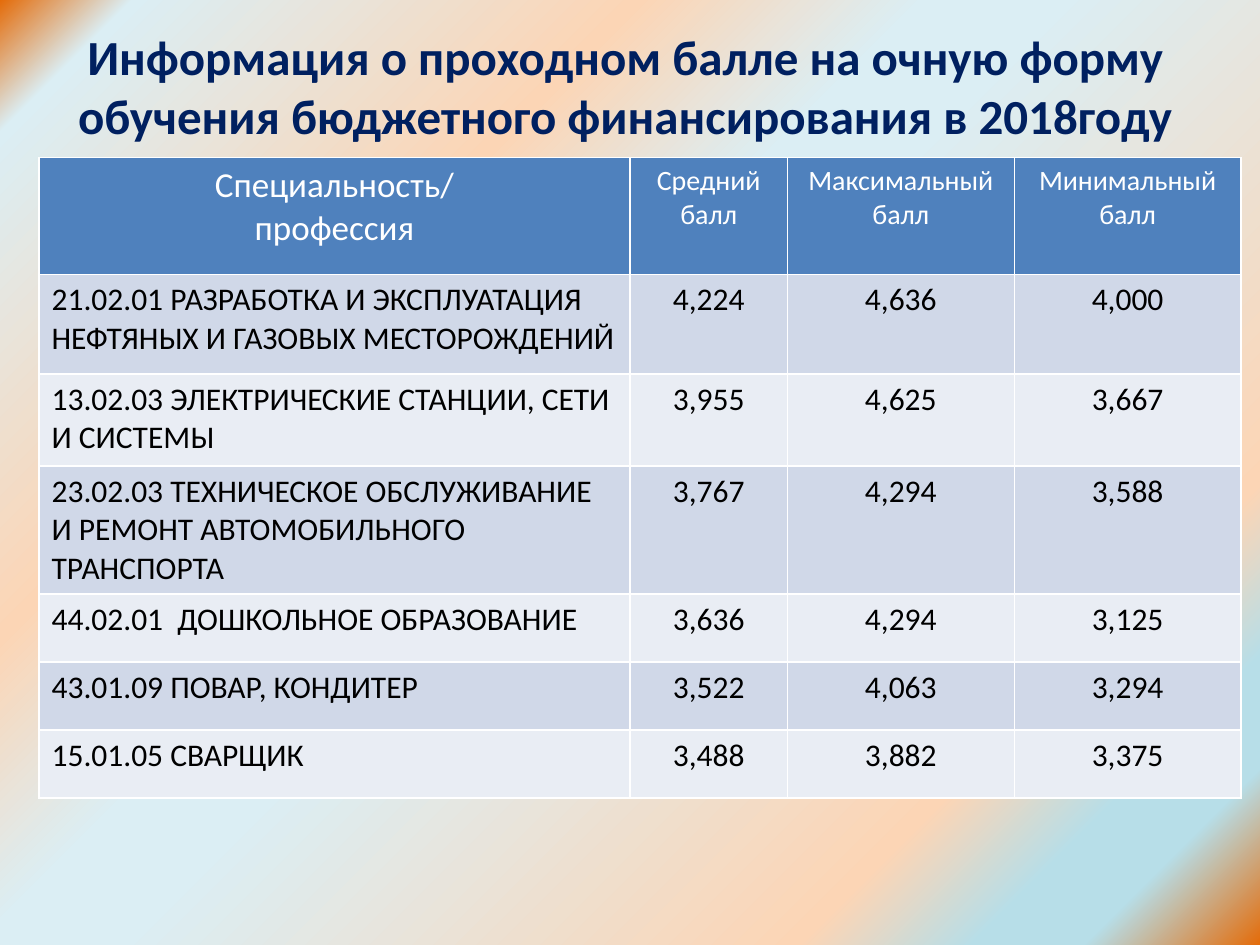
from pptx import Presentation
from pptx.dml.color import RGBColor as RGB
from pptx.enum.text import MSO_ANCHOR as Anchor, PP_ALIGN as Align
from pptx.oxml.ns import qn
from pptx.util import Inches, Pt
from lxml.etree import SubElement

COLORS = {
    "title": "002060", "header": "4F81BD", "odd": "D0D8E8", "even": "E9EDF4",
    "white": "FFFFFF", "black": "000000",
    "orange": "E46C0A", "teal": "B7DEE8", "peach": "FCD5B5", "ice": "DBEEF4",
}
FONT = "Calibri"
STOPS = [
    (0, "orange"), (8, "teal"), (13, "teal"), (21, "peach"), (52, "ice"),
    (56, "ice"), (58, "ice"), (71, "peach"), (94, "ice"), (100, "orange"),
]
TITLE = "Информация о проходном балле на очную форму обучения бюджетного финансирования в 2018году"
HEADER = ["Специальность/\nпрофессия", "Средний балл", "Максимальный балл", "Минимальный балл"]
SCORES = [
    ["21.02.01 РАЗРАБОТКА И ЭКСПЛУАТАЦИЯ НЕФТЯНЫХ И ГАЗОВЫХ МЕСТОРОЖДЕНИЙ", "4,224", "4,636", "4,000"],
    ["13.02.03 ЭЛЕКТРИЧЕСКИЕ СТАНЦИИ, СЕТИ И СИСТЕМЫ", "3,955", "4,625", "3,667"],
    ["23.02.03 ТЕХНИЧЕСКОЕ ОБСЛУЖИВАНИЕ И РЕМОНТ АВТОМОБИЛЬНОГО ТРАНСПОРТА", "3,767", "4,294", "3,588"],
    ["44.02.01  ДОШКОЛЬНОЕ ОБРАЗОВАНИЕ", "3,636", "4,294", "3,125"],
    ["43.01.09 ПОВАР, КОНДИТЕР", "3,522", "4,063", "3,294"],
    ["15.01.05 СВАРЩИК", "3,488", "3,882", "3,375"],
]
COLUMN_WIDTHS = [4.69, 1.25, 1.8, 1.8]
ROW_HEIGHTS = [0.93, 0.79, 0.73, 1.0, 0.54, 0.54, 0.54]


def color(name):
    return RGB.from_string(COLORS[name])


def style_paragraph(para, size, color_name, align, bold=False):
    para.alignment = align
    para.font.name = FONT
    para.font.size = Pt(size)
    para.font.bold = bold
    para.font.color.rgb = color(color_name)


def paint_background(page):
    page.background.fill.gradient()
    gradient = page.element.find(".//" + qn("a:gradFill"))
    gradient.clear()
    gradient.set("rotWithShape", "1")
    stops = SubElement(gradient, qn("a:gsLst"))
    for percent, name in STOPS:
        stop = SubElement(stops, qn("a:gs"), pos=str(percent * 1000))
        SubElement(stop, qn("a:srgbClr"), val=COLORS[name])
    shade = SubElement(gradient, qn("a:path"), path="circle")
    SubElement(shade, qn("a:fillToRect"), l="100000", t="100000")


def place_title(page, left, top, width, height):
    title = page.shapes.title
    title.left, title.top, title.width, title.height = left, top, width, height
    title.text_frame.text = TITLE
    title.text_frame.word_wrap = True
    title.text_frame.vertical_anchor = Anchor.TOP
    style_paragraph(title.text_frame.paragraphs[0], 28, "title", Align.CENTER, bold=True)


def fill_cell(cell, text, row, column):
    cell.text = text
    cell.fill.solid()
    if row == 0:
        fill, ink, size = "header", "white", 20 if column == 0 else 16
    else:
        fill, ink, size = "odd" if row % 2 else "even", "black", 18
    cell.fill.fore_color.rgb = color(fill)
    align = Align.LEFT if row and column == 0 else Align.CENTER
    for para in cell.text_frame.paragraphs:
        style_paragraph(para, size, ink, align)


def place_scores(page, left, top, width, height):
    rows = [HEADER] + SCORES
    table = page.shapes.add_table(len(rows), len(HEADER), left, top, width, height).table
    for column, inches in zip(table.columns, COLUMN_WIDTHS):
        column.width = Inches(inches)
    for row, inches in zip(table.rows, ROW_HEIGHTS):
        row.height = Inches(inches)
    for r, texts in enumerate(rows):
        for c, text in enumerate(texts):
            fill_cell(table.cell(r, c), text, r, c)


def main():
    deck = Presentation()
    deck.slide_width, deck.slide_height = Inches(10), Inches(7.5)
    page = deck.slides.add_slide(deck.slide_layouts[5])
    paint_background(page)
    place_title(page, Inches(0.31), Inches(0.16), Inches(9.3), Inches(1.04))
    place_scores(page, Inches(0.31), Inches(1.25),
                 Inches(sum(COLUMN_WIDTHS)), Inches(sum(ROW_HEIGHTS)))
    deck.save("out.pptx")


if __name__ == "__main__":
    main()
